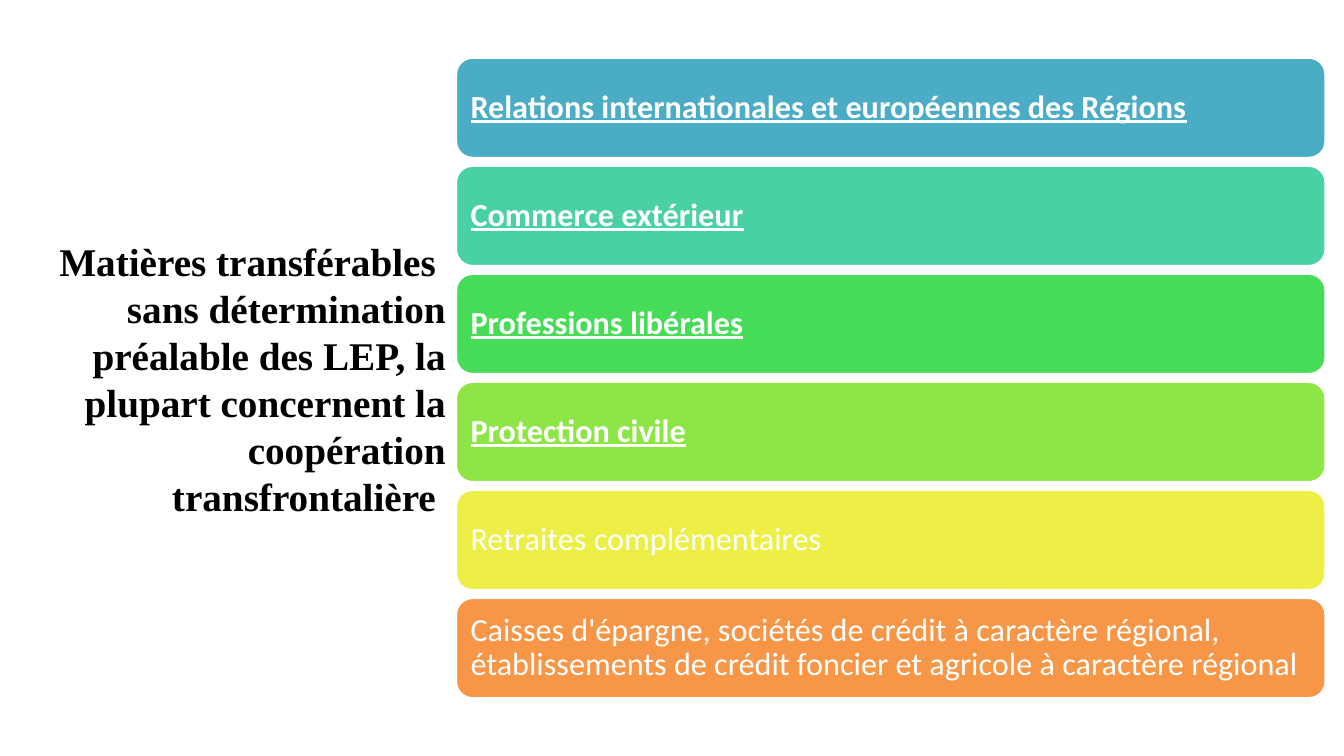
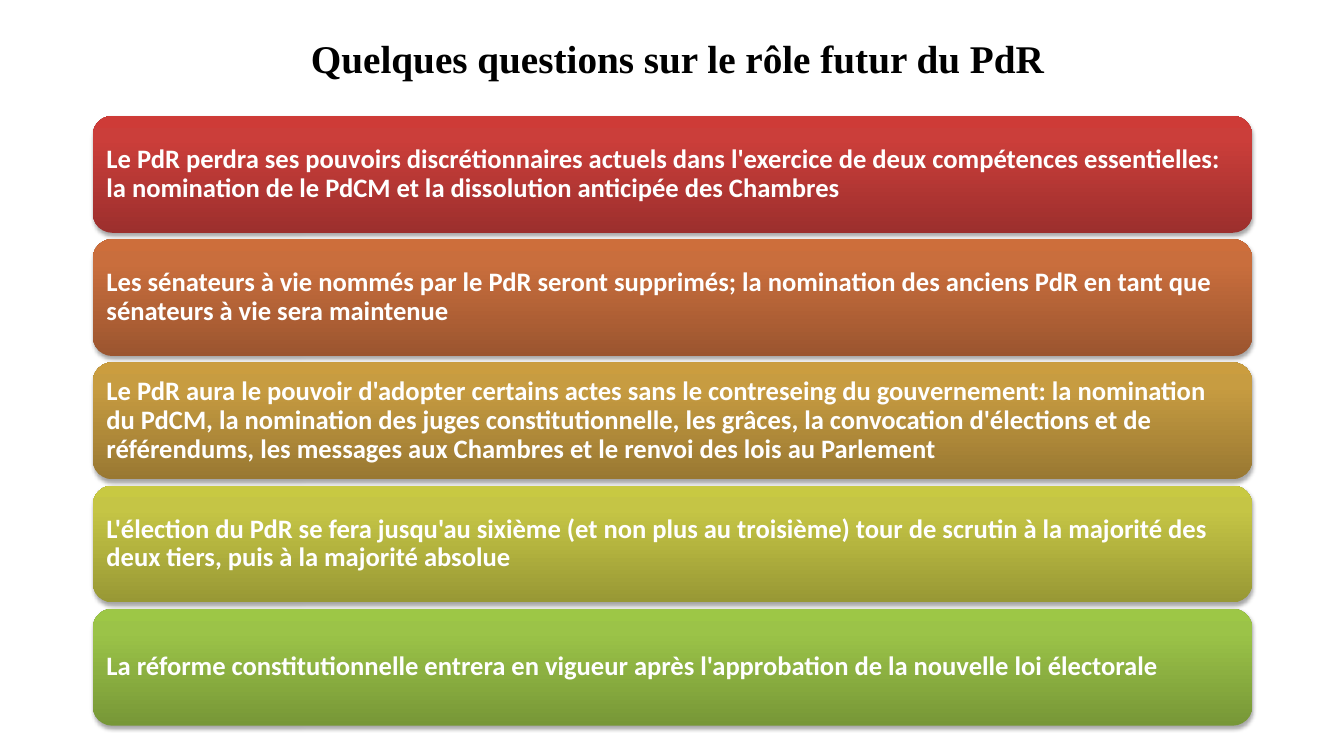
from copy import deepcopy
from dataclasses import dataclass

from lxml import etree
from pptx import Presentation
from pptx.dml.color import RGBColor
from pptx.enum.shapes import MSO_SHAPE
from pptx.enum.text import MSO_ANCHOR, MSO_AUTO_SIZE, PP_ALIGN
from pptx.oxml.ns import qn
from pptx.util import Pt

ROUNDED = MSO_SHAPE.ROUNDED_RECTANGLE
MIDDLE = MSO_ANCHOR.MIDDLE
NO_AUTOFIT = MSO_AUTO_SIZE.NONE
LEFT, CENTER, RIGHT = PP_ALIGN.LEFT, PP_ALIGN.CENTER, PP_ALIGN.RIGHT

EMU_PER_PX = 9144  # 100 px to the inch
SLIDE_WIDTH, SLIDE_HEIGHT = 1333, 750
TITLE_ONLY = 5


@dataclass(frozen=True)
class Theme:
    title_font: str = "Times New Roman"
    body_font: str = "Calibri"
    title_size: int = 28
    topic_size: int = 23
    question_size: int = 19
    title_color: str = "000000"
    card_text: str = "FFFFFF"
    card_outline: str = "FFFFFF"
    shadow: str = "000000"
    topic_fills: tuple = ("4BACC6", "49D1A3", "47DC57", "8DE646", "EEEF46", "F79646")
    gradient_positions: tuple = (0, 0.8, 1)
    question_gradients: tuple = (
        ("9C2F2D", "CB3E3A", "CE3B37"),
        ("9B552F", "C96E3D", "CD6E3B"),
        ("997832", "C79C41", "CB9D3F"),
        ("989835", "C5C545", "C8C942"),
        ("779737", "9BC348", "9DC746"),
    )


TOPICS = (
    ("Relations internationales et européennes des Régions", True),
    ("Commerce extérieur", True),
    ("Professions libérales", True),
    ("Protection civile", True),
    ("Retraites complémentaires", False),
    ("Caisses d'épargne, sociétés de crédit à caractère régional, "
     "établissements de crédit foncier et agricole à caractère régional", False),
)

QUESTIONS = (
    "Le PdR perdra ses pouvoirs discrétionnaires actuels dans l'exercice de deux "
    "compétences essentielles: la nomination de le PdCM et la dissolution anticipée "
    "des Chambres",
    "Les sénateurs à vie nommés par le PdR seront supprimés; la nomination des anciens "
    "PdR en tant que sénateurs à vie sera maintenue",
    "Le PdR aura le pouvoir d'adopter certains actes sans le contreseing du "
    "gouvernement: la nomination du PdCM, la nomination des juges constitutionnelle, "
    "les grâces, la convocation d'élections et de référendums, les messages aux "
    "Chambres et le renvoi des lois au Parlement",
    "L'élection du PdR se fera jusqu'au sixième (et non plus au troisième) tour de "
    "scrutin à la majorité des deux tiers, puis à la majorité absolue",
    "La réforme constitutionnelle entrera en vigueur après l'approbation de la "
    "nouvelle loi électorale",
)


def px(length):
    return round(length * EMU_PER_PX)


def stack(top, bottom, height, count):
    """Give the tops of equal cards spread evenly from top to bottom."""
    pitch = (bottom - top - height) / (count - 1)
    return [top + index * pitch for index in range(count)]


class Deck:
    def __init__(self, theme):
        self.theme = theme
        self.presentation = Presentation()
        self.presentation.slide_width = px(SLIDE_WIDTH)
        self.presentation.slide_height = px(SLIDE_HEIGHT)
        self.slide = None

    def add_slide(self):
        layout = self.presentation.slide_layouts[TITLE_ONLY]
        self.slide = self.presentation.slides.add_slide(layout)

    def set_text(self, shape, text, font_name, size, color, alignment, bold=True):
        frame = shape.text_frame
        frame.text = text
        frame.word_wrap = True
        frame.auto_size = NO_AUTOFIT
        frame.vertical_anchor = MIDDLE
        paragraph = frame.paragraphs[0]
        paragraph.alignment = alignment
        font = paragraph.font
        font.name = font_name
        font.size = Pt(size)
        font.bold = bold
        font.color.rgb = RGBColor.from_string(color)
        return paragraph

    def title(self, text, left, top, width, height, alignment):
        title = self.slide.shapes.title
        title.left, title.top = px(left), px(top)
        title.width, title.height = px(width), px(height)
        theme = self.theme
        self.set_text(title, text, theme.title_font, theme.title_size,
                      theme.title_color, alignment)

    def card(self, text, left, top, width, height, size, inset, bold=True):
        """Add a rounded card, still to be filled, and return it with its paragraph."""
        card = self.slide.shapes.add_shape(
            ROUNDED, px(left), px(top), px(width), px(height))
        card.shadow.inherit = False
        theme = self.theme
        paragraph = self.set_text(card, text, theme.body_font, size,
                                  theme.card_text, LEFT, bold)
        paragraph.line_spacing = 0.9
        frame = card.text_frame
        frame.margin_left = frame.margin_right = px(inset)
        frame.margin_top = frame.margin_bottom = px(inset)
        return card, paragraph

    def topic_card(self, text, top, height, fill, emphasized):
        card, paragraph = self.card(text, 452, top, 863, height,
                                    self.theme.topic_size, 10, emphasized)
        paragraph.font.underline = emphasized
        card.fill.solid()
        card.fill.fore_color.rgb = RGBColor.from_string(fill)
        card.line.color.rgb = RGBColor.from_string(self.theme.card_outline)
        card.line.width = Pt(2)

    def question_card(self, text, top, height, colors):
        card, _ = self.card(text, 92, top, 1150, height,
                            self.theme.question_size, 8)
        card.line.fill.background()
        self.gradient(card, colors)
        self.drop_shadow(card)

    def gradient(self, shape, colors):
        """Fill the shape from bottom to top with three colours."""
        fill = shape.fill
        fill.gradient()
        fill.gradient_angle = 90
        stop_list = next(shape._element.spPr.iter(qn("a:gsLst")))
        stop_list.insert(1, deepcopy(stop_list[0]))
        positions = self.theme.gradient_positions
        for stop, position, color in zip(fill.gradient_stops, positions, colors):
            stop.position = position
            stop.color.rgb = RGBColor.from_string(color)

    def drop_shadow(self, shape):
        effects = shape._element.spPr.find(qn("a:effectLst"))
        shadow = etree.SubElement(
            effects, qn("a:outerShdw"), blurRad=str(Pt(3.1)), dist=str(Pt(1.8)),
            dir="5400000", rotWithShape="0")
        color = etree.SubElement(shadow, qn("a:srgbClr"), val=self.theme.shadow)
        etree.SubElement(color, qn("a:alpha"), val="35000")


def add_topics_slide(deck):
    deck.add_slide()
    deck.title("Matières transférables \vsans détermination préalable des LEP, "
               "la plupart concernent la coopération transfrontalière ",
               -10, 70, 462, 611, RIGHT)
    height = 100
    tops = stack(57, 693, height, len(TOPICS))
    for (text, emphasized), top, fill in zip(TOPICS, tops, deck.theme.topic_fills):
        deck.topic_card(text, top, height, fill, emphasized)


def add_questions_slide(deck):
    deck.add_slide()
    deck.title(" Quelques questions sur le rôle futur du PdR", 92, 15, 1150, 85, CENTER)
    height = 116
    tops = stack(115, 720, height, len(QUESTIONS))
    for text, top, colors in zip(QUESTIONS, tops, deck.theme.question_gradients):
        deck.question_card(text, top, height, colors)


def main():
    deck = Deck(Theme())
    add_topics_slide(deck)
    add_questions_slide(deck)
    deck.presentation.save("out.pptx")


if __name__ == "__main__":
    main()
